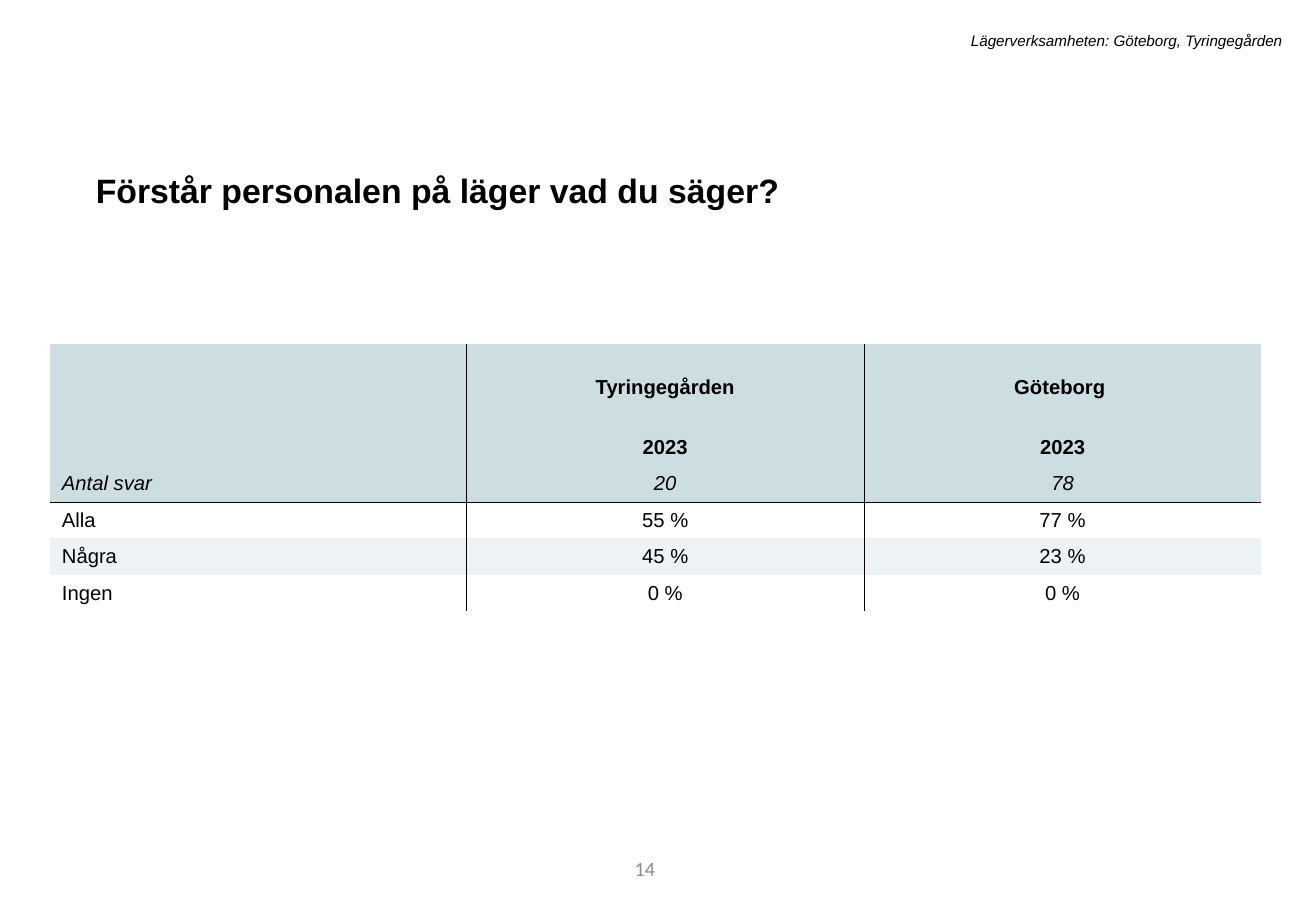
from dataclasses import dataclass

from lxml.etree import SubElement
from pptx import Presentation
from pptx.dml.color import RGBColor
from pptx.enum.text import MSO_ANCHOR, PP_ALIGN
from pptx.oxml.ns import qn
from pptx.slide import Slide
from pptx.table import _Cell
from pptx.text.text import TextFrame
from pptx.util import Inches, Pt

BLACK = RGBColor(0x00, 0x00, 0x00)
WHITE = RGBColor(0xFF, 0xFF, 0xFF)
GRAY = RGBColor(0x8C, 0x8C, 0x8C)
TEAL = RGBColor(0xCC, 0xDE, 0xE1)
PALE = RGBColor(0xED, 0xF3, 0xF4)


@dataclass
class Style:
    size: float = 12
    bold: bool = False
    slant: bool = False
    color: RGBColor = BLACK
    font: str = "Arial"
    align: PP_ALIGN = PP_ALIGN.LEFT


@dataclass
class Label:
    text: str
    left: float
    top: float
    width: float
    height: float
    style: Style
    anchor: MSO_ANCHOR = MSO_ANCHOR.TOP
    before: float = 0
    lines: float = 1


@dataclass
class Row:
    cells: tuple[str, str, str]
    height: float = 0.3
    fill: RGBColor = WHITE
    bold: bool = False
    slant: bool = False
    anchor: MSO_ANCHOR = MSO_ANCHOR.MIDDLE


LABELS = [
    Label("14", 3.05, 6.95, 2.44, 0.4,
          Style(color=GRAY, font="Calibri", align=PP_ALIGN.RIGHT), MSO_ANCHOR.MIDDLE),
    Label("Förstår personalen på läger vad du säger?", 0.69, 1.28, 9.4, 0.47,
          Style(20, bold=True), before=10, lines=1.2),
    Label("Lägerverksamheten: Göteborg, Tyringegården", 1.79, 0.21, 8.86, 0.25,
          Style(9, slant=True, align=PP_ALIGN.RIGHT)),
]
ROWS = [
    Row(("", "Tyringegården", "Göteborg "), 0.5, TEAL, bold=True, anchor=MSO_ANCHOR.BOTTOM),
    Row(("", "2023", "2023"), 0.5, TEAL, bold=True, anchor=MSO_ANCHOR.BOTTOM),
    Row(("Antal svar", "20", "78"), fill=TEAL, slant=True),
    Row(("Alla", "55 %", "77 %")),
    Row(("Några", "45 %", "23 %"), fill=PALE),
    Row(("Ingen", "0 %", "0 %")),
]
WIDTHS = (3.43, 3.27, 3.27)
HEAD = 3


def write(frame: TextFrame, text: str, style: Style) -> None:
    """Write one styled run into the first paragraph."""
    para = frame.paragraphs[0]
    para.alignment = style.align
    run = para.add_run()
    run.text = text
    font = run.font
    font.name, font.size = style.font, Pt(style.size)
    font.bold, font.italic = style.bold, style.slant
    font.color.rgb = style.color


def add_label(slide: Slide, label: Label) -> None:
    """Add a text box."""
    spot = map(Inches, (label.left, label.top, label.width, label.height))
    frame = slide.shapes.add_textbox(*spot).text_frame
    frame.word_wrap = True
    frame.vertical_anchor = label.anchor
    write(frame, label.text, label.style)
    para = frame.paragraphs[0]
    para.space_before, para.line_spacing = Pt(label.before), label.lines


def set_edges(cell: _Cell, edges: str) -> None:
    """Draw the named cell edges in black and clear the rest."""
    props = cell._tc.get_or_add_tcPr()
    for side in "LRTB":
        line = SubElement(props, qn(f"a:ln{side}"), w=str(Pt(0.25)))
        if side in edges:
            fill = SubElement(line, qn("a:solidFill"))
            SubElement(fill, qn("a:srgbClr"), val=str(BLACK))
        else:
            SubElement(line, qn("a:noFill"))


def add_grid(slide: Slide) -> None:
    """Add the table of answers."""
    tall = sum(row.height for row in ROWS)
    spot = map(Inches, (0.41, 2.83, sum(WIDTHS), tall))
    table = slide.shapes.add_table(len(ROWS), len(WIDTHS), *spot).table
    table.first_row = table.horz_banding = False
    for col, width in zip(table.columns, WIDTHS):
        col.width = Inches(width)
    for y, row in enumerate(ROWS):
        table.rows[y].height = Inches(row.height)
        for x, text in enumerate(row.cells):
            cell = table.cell(y, x)
            edges = ("L" if x else "") + ("R" if x < len(WIDTHS) - 1 else "")
            edges += {HEAD - 1: "B", HEAD: "T"}.get(y, "")
            set_edges(cell, edges)
            cell.fill.solid()
            cell.fill.fore_color.rgb = row.fill
            cell.vertical_anchor = row.anchor
            if text:
                align = PP_ALIGN.CENTER if x else PP_ALIGN.LEFT
                style = Style(bold=row.bold, slant=row.slant, align=align)
                write(cell.text_frame, text, style)


def main() -> None:
    """Build and save the slide."""
    deck = Presentation()
    deck.slide_width, deck.slide_height = Inches(10.83), Inches(7.5)
    slide = deck.slides.add_slide(deck.slide_layouts[6])
    for label in LABELS:
        add_label(slide, label)
    add_grid(slide)
    deck.save("out.pptx")


if __name__ == "__main__":
    main()
